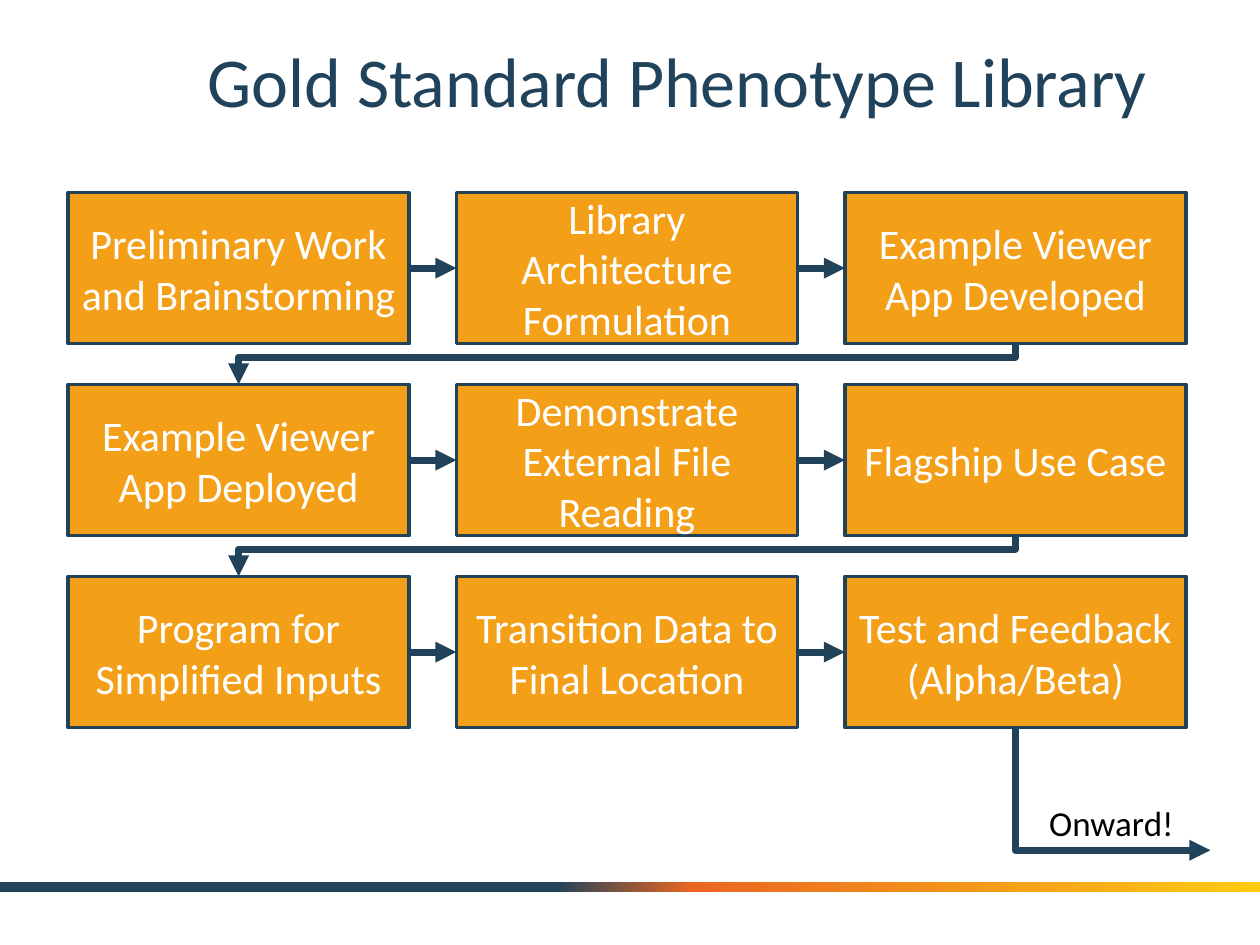
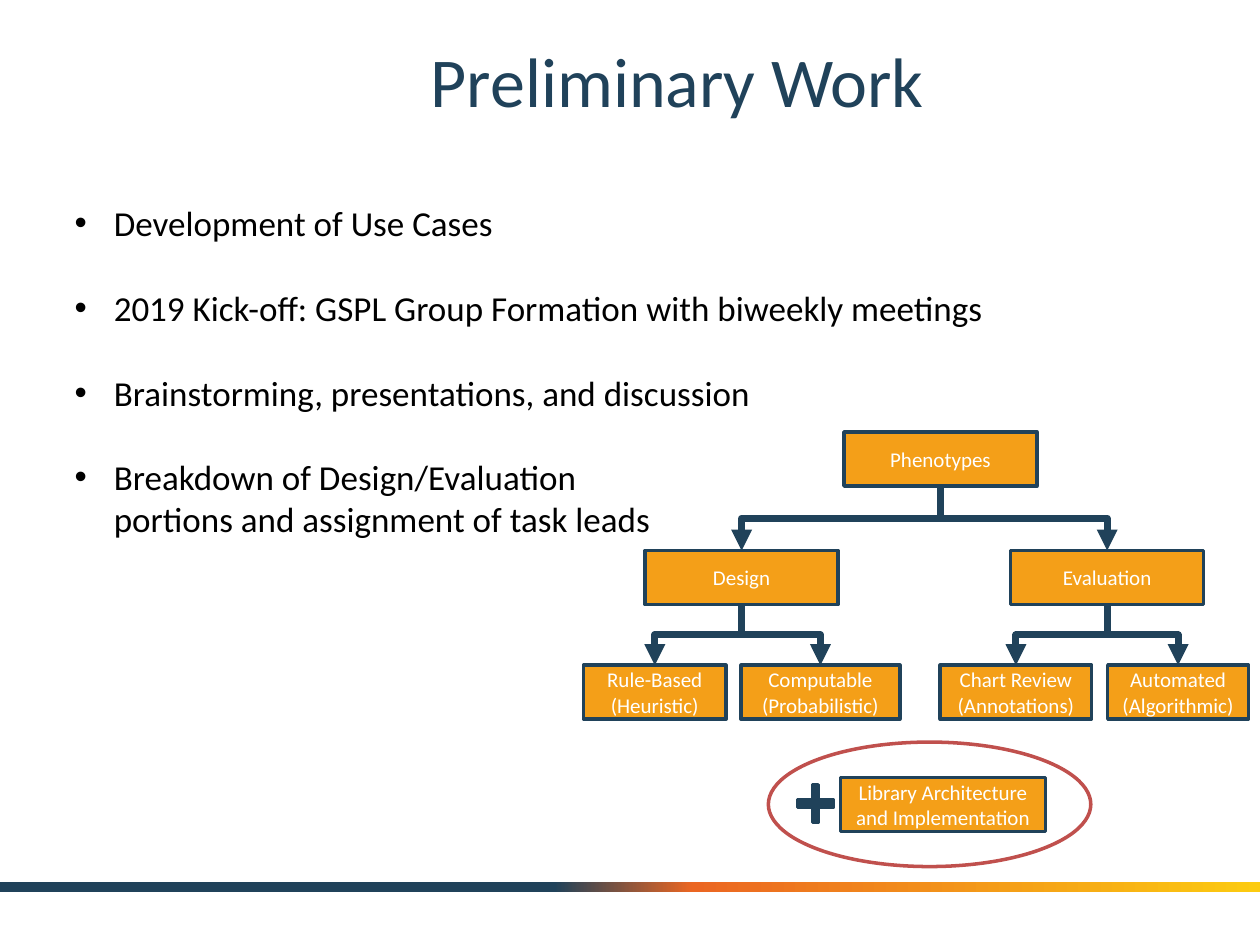
from lxml import etree
from pptx import Presentation
from pptx.dml.color import RGBColor
from pptx.enum.shapes import MSO_CONNECTOR, MSO_SHAPE
from pptx.enum.text import MSO_ANCHOR, MSO_AUTO_SIZE, PP_ALIGN
from pptx.oxml.ns import qn
from pptx.util import Cm, Pt

RECT, ELLIPSE, CROSS = MSO_SHAPE.RECTANGLE, MSO_SHAPE.OVAL, MSO_SHAPE.CROSS
STRAIGHT, ELBOW = MSO_CONNECTOR.STRAIGHT, MSO_CONNECTOR.ELBOW
LEFT, CENTER = PP_ALIGN.LEFT, PP_ALIGN.CENTER
TOP, MIDDLE = MSO_ANCHOR.TOP, MSO_ANCHOR.MIDDLE
NO_FIT = MSO_AUTO_SIZE.NONE
TITLE_ONLY, TITLE_AND_BODY = 5, 1

FONT = "Calibri"
NAVY, ORANGE, RED, WHITE, BLACK = "20425A", "F49F18", "C0504D", "FFFFFF", "000000"
BAND_STOPS = [(44, NAVY), (55, "EB6622"), (100, "FCCB10")]

ROADMAP_TITLE = "Gold Standard Phenotype Library"
ROADMAP = [
    ["Preliminary Work and Brainstorming", "Library Architecture Formulation",
     "Example Viewer App Developed"],
    ["Example Viewer App Deployed", "Demonstrate External File Reading",
     "Flagship Use Case"],
    ["Program for Simplified Inputs", "Transition Data to Final Location",
     "Test and Feedback (Alpha/Beta)"],
]
STEP_X, STEP_Y, STEP_W, STEP_H = 1.37, 3.88, 6.88, 3.05
PITCH_X, PITCH_Y = 7.83, 3.87

PRELIM_TITLE = "Preliminary Work"
PRELIM_POINTS = [
    "Development of Use Cases",
    "2019 Kick-off: GSPL Group Formation with biweekly meetings",
    "Brainstorming, presentations, and discussion",
    "Breakdown of Design/Evaluation\vportions and assignment of task leads",
]
LEVEL_Y, NODE_H = [8.71, 11.1, 13.41], 1.09
TREE = [
    ("Phenotypes", None, 0, 18.96, 3.89),
    ("Design", "Phenotypes", 1, 14.95, 3.89),
    ("Evaluation", "Phenotypes", 1, 22.32, 3.89),
    ("Rule-Based (Heuristic)", "Design", 2, 13.2, 2.87),
    ("Computable (Probabilistic)", "Design", 2, 16.54, 3.2),
    ("Chart Review (Annotations)", "Evaluation", 2, 20.48, 3.05),
    ("Automated (Algorithmic)", "Evaluation", 2, 23.75, 2.84),
]
LIBRARY = "Library Architecture and Implementation"


def rgb(color):
    return RGBColor.from_string(color)


def write(p, text, size=12, color=WHITE, align=CENTER, before=0):
    p.text = text
    p.alignment = align
    p.space_before = Pt(before)
    for r in p.runs:
        r.font.name, r.font.size = FONT, Pt(size)
        r.font.color.rgb = rgb(color)
    for br in p._p.findall(qn("a:br")):
        etree.SubElement(br, qn("a:rPr")).set("sz", str(size * 100))


def place(sp, x, y, w, h):
    sp.left, sp.top, sp.width, sp.height = Cm(x), Cm(y), Cm(w), Cm(h)


def frame(sp, anchor):
    tf = sp.text_frame
    tf.word_wrap, tf.auto_size, tf.vertical_anchor = True, NO_FIT, anchor
    return tf


def shape(s, kind, x, y, w, h, fill=None, line=None):
    sp = s.shapes.add_shape(kind, Cm(x), Cm(y), Cm(w), Cm(h))
    sp.shadow.inherit = False
    if fill:
        sp.fill.solid()
        sp.fill.fore_color.rgb = rgb(fill)
    else:
        sp.fill.background()
    if line:
        sp.line.color.rgb, sp.line.width = rgb(line), Pt(2)
    else:
        sp.line.fill.background()
    return sp


def box(s, text, x, y, w, h, size):
    sp = shape(s, RECT, x, y, w, h, ORANGE, NAVY)
    write(frame(sp, MIDDLE).paragraphs[0], text, size=size)
    return sp


def arrow(s, kind, x1, y1, x2, y2):
    c = s.shapes.add_connector(kind, x1, y1, x2, y2)
    c.line.color.rgb, c.line.width = rgb(NAVY), Pt(4)
    spPr = c.element.spPr
    etree.SubElement(spPr.find(qn("a:ln")), qn("a:tailEnd")).set("type", "triangle")
    etree.SubElement(spPr, qn("a:effectLst"))
    return c


def elbow_down(s, start, end, bend=0.5):
    (x1, y1), (x2, y2) = start, end
    mid_x, mid_y = (x1 + x2) // 2, (y1 + y2) // 2
    half_w, half_h = abs(x2 - x1) // 2, (y2 - y1) // 2
    side, turn = (-1, 270) if x2 > x1 else (1, 90)
    c = arrow(s, ELBOW, mid_x - side * half_h, mid_y - half_w,
              mid_x + side * half_h, mid_y + half_w)
    spPr = c.element.spPr
    spPr.find(qn("a:xfrm")).set("rot", str(turn * 60000))
    geom = spPr.find(qn("a:prstGeom"))
    if bend is None:
        geom.set("prst", "bentConnector2")
        return
    avLst = geom.find(qn("a:avLst"))
    if avLst is None:
        avLst = etree.SubElement(geom, qn("a:avLst"))
    gd = etree.SubElement(avLst, qn("a:gd"))
    gd.set("name", "adj1")
    gd.set("fmla", f"val {round(bend * 100000)}")


def top(sp):
    return sp.left + sp.width // 2, sp.top


def bottom(sp):
    return sp.left + sp.width // 2, sp.top + sp.height


def add_band(prs, s):
    sp = shape(s, RECT, 0, 17.78, 25.4, 0.2)
    sp.fill.gradient()
    sp.fill.gradient_angle = 0
    gsLst = sp.element.spPr.find(qn("a:gradFill")).find(qn("a:gsLst"))
    for gs in list(gsLst):
        gsLst.remove(gs)
    for pos, color in BAND_STOPS:
        gs = etree.SubElement(gsLst, qn("a:gs"))
        gs.set("pos", str(pos * 1000))
        etree.SubElement(gs, qn("a:srgbClr")).set("val", color)
    prs.slide_master.element.cSld.spTree.append(sp.element)


def new_slide(prs, layout, title):
    s = prs.slides.add_slide(prs.slide_layouts[layout])
    place(s.shapes.title, 3.18, 0.43, 20.95, 2.34)
    write(frame(s.shapes.title, MIDDLE).paragraphs[0], title, size=40, color=NAVY)
    return s


def roadmap_slide(prs):
    s = new_slide(prs, TITLE_ONLY, ROADMAP_TITLE)
    steps = [[box(s, text, STEP_X + i * PITCH_X, STEP_Y + j * PITCH_Y,
                  STEP_W, STEP_H, 24) for i, text in enumerate(row)]
             for j, row in enumerate(ROADMAP)]
    for row in steps:
        for a, b in zip(row, row[1:]):
            c = arrow(s, STRAIGHT, 0, 0, 0, 0)
            c.begin_connect(a, 3)
            c.end_connect(b, 1)
    for row, following in zip(steps, steps[1:]):
        elbow_down(s, bottom(row[-1]), top(following[0]), bend=0.33)
    elbow_down(s, bottom(steps[-1][-1]), (Cm(24.4), Cm(17.14)), bend=None)
    sp = s.shapes.add_textbox(Cm(20.9), Cm(16.03), Cm(3.07), Cm(1.11))
    write(frame(sp, TOP).paragraphs[0], "Onward!", size=20, color=BLACK, align=LEFT)
    return s


def preliminary_slide(prs):
    s = new_slide(prs, TITLE_AND_BODY, PRELIM_TITLE)
    body = s.placeholders[1]
    place(body, 1.25, 3.94, 21.84, 7.09)
    tf = frame(body, TOP)
    for i, text in enumerate(PRELIM_POINTS):
        p = tf.add_paragraph() if i else tf.paragraphs[0]
        write(p, text, size=20, color=BLACK, align=LEFT, before=24.4 if i else 0)
        pPr = p._p.get_or_add_pPr()
        pPr.set("marL", str(Cm(0.79)))
        pPr.set("indent", str(-Cm(0.79)))
        etree.SubElement(pPr, qn("a:buChar")).set("char", "•")
    nodes = {}
    for text, parent, level, center, w in TREE:
        nodes[text] = box(s, text, center - w / 2, LEVEL_Y[level], w, NODE_H, 12)
        if parent:
            elbow_down(s, bottom(nodes[parent]), top(nodes[text]))
    box(s, LIBRARY, 16.94, 15.67, 4.14, NODE_H, 12)
    plus = shape(s, CROSS, 16.08, 15.82, 0.71, 0.76, NAVY, NAVY)
    plus.adjustments[0] = 0.417
    shape(s, ELLIPSE, 15.49, 14.96, 6.5, 2.51, line=RED)


def main():
    prs = Presentation()
    prs.slide_width, prs.slide_height = Cm(25.4), Cm(19.05)
    first = roadmap_slide(prs)
    add_band(prs, first)
    preliminary_slide(prs)
    prs.save("out.pptx")


if __name__ == "__main__":
    main()
